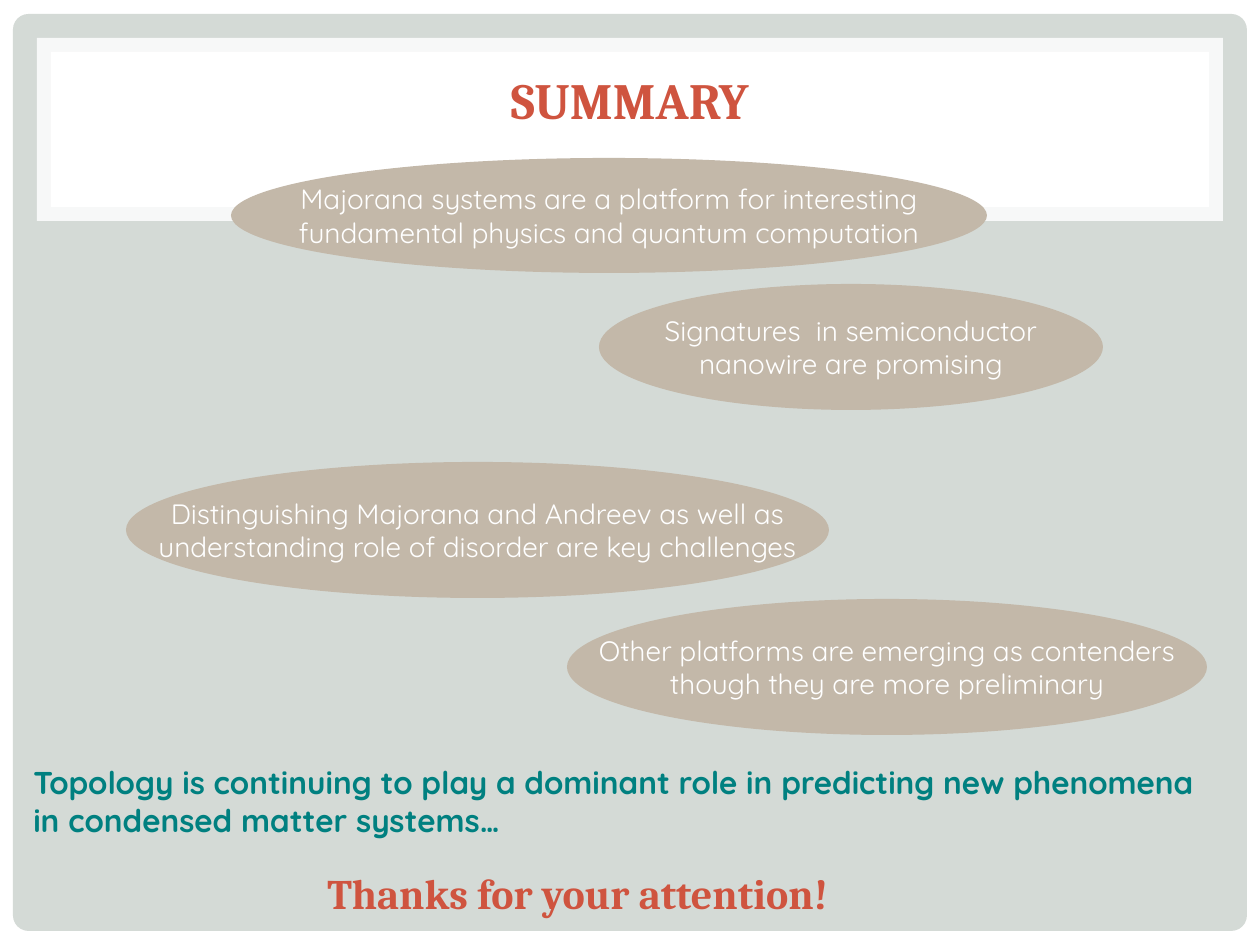
from dataclasses import dataclass

from lxml import etree
from pptx import Presentation
from pptx.dml.color import RGBColor
from pptx.enum.shapes import MSO_SHAPE
from pptx.enum.text import MSO_ANCHOR, PP_ALIGN
from pptx.oxml.ns import qn
from pptx.util import Emu, Pt

RECTANGLE, ROUNDED, OVAL = MSO_SHAPE.RECTANGLE, MSO_SHAPE.ROUNDED_RECTANGLE, MSO_SHAPE.OVAL
LEFT, CENTER = PP_ALIGN.LEFT, PP_ALIGN.CENTER
TOP, MIDDLE = MSO_ANCHOR.TOP, MSO_ANCHOR.MIDDLE
EMU_PER_PX = 914400 / 126
SLIDE_BOX = (0, 0, 1260, 945)


@dataclass(frozen=True)
class Theme:
    """Colours, fonts and type sizes of the slide."""
    sage: str = "D4DAD6"
    white: str = "FFFFFF"
    taupe: str = "C3B8A9"
    rust: str = "CF543F"
    teal: str = "008080"
    serif: str = "Cambria"
    sans: str = "Quicksand"
    title_size: int = 29
    thanks_size: int = 24
    outlook_size: int = 18
    point_size: int = 16


THEME = Theme()

POINTS = [
    ((599, 284, 504, 126), ["Signatures  in semiconductor", "nanowire are promising"]),
    ((567, 599, 640, 136), ["Other platforms are emerging as contenders",
                            "though they are more preliminary"]),
    ((231, 158, 756, 115), ["Majorana systems are a platform for interesting",
                            "fundamental physics and quantum computation"]),
    ((126, 462, 703, 136), ["Distinguishing Majorana and Andreev as well as",
                            "understanding role of disorder are key challenges"]),
]
OUTLOOK = ["Topology is continuing to play a dominant role in predicting new phenomena",
           "in condensed matter systems…"]


def px(length):
    """Turn pixels into EMU."""
    return Emu(round(length * EMU_PER_PX))


def inset(box, dx, dy):
    """Shrink a box by equal margins on opposite sides."""
    left, top, width, height = box
    return left + dx, top + dy, width - 2 * dx, height - 2 * dy


def add_panel(slide, box, kind, color, opacity=100):
    """Add a borderless filled shape."""
    panel = slide.shapes.add_shape(kind, *map(px, box))
    panel.shadow.inherit = False
    panel.fill.solid()
    panel.fill.fore_color.rgb = RGBColor.from_string(color)
    panel.line.fill.background()
    if opacity < 100:
        tint = panel.fill._xPr.find(qn("a:solidFill"))[0]
        etree.SubElement(tint, qn("a:alpha"), val=str(opacity * 1000))
    return panel


def write_text(shape, lines, *, font, size, color, bold=False,
               align=LEFT, anchor=TOP, wrap=True):
    """Write one paragraph per line in a single format."""
    frame = shape.text_frame
    frame.word_wrap = wrap
    frame.vertical_anchor = anchor
    frame.text = "\n".join(lines)
    for paragraph in frame.paragraphs:
        paragraph.alignment = align
        for run in paragraph.runs:
            run.font.name = font
            run.font.size = Pt(size)
            run.font.bold = bold
            run.font.color.rgb = RGBColor.from_string(color)


def add_label(slide, box, lines, **text_format):
    """Add a text box with formatted lines."""
    write_text(slide.shapes.add_textbox(*map(px, box)), lines, **text_format)


def add_frame(slide, box):
    """Add the rounded page on its white margin."""
    add_panel(slide, box, RECTANGLE, THEME.white)
    page = add_panel(slide, inset(box, 13, 14), ROUNDED, THEME.sage)
    page.adjustments[0] = 0.017


def add_header(slide, box):
    """Add the title band with its pale border."""
    left, top, width, _ = box
    add_panel(slide, box, RECTANGLE, THEME.white, opacity=83)
    add_panel(slide, inset(box, 14, 14), RECTANGLE, THEME.white)
    add_label(slide, (left + 25, top + 24, width - 50, 74), ["SUMMARY"],
              font=THEME.serif, size=THEME.title_size, color=THEME.rust,
              bold=True, align=CENTER, anchor=MIDDLE)


def add_point(slide, box, lines):
    """Add one summary point in an ellipse."""
    write_text(add_panel(slide, box, OVAL, THEME.taupe), lines,
               font=THEME.sans, size=THEME.point_size, color=THEME.white,
               align=CENTER, anchor=MIDDLE, wrap=False)


def add_closing(slide, box):
    """Add the outlook and the thanks below it."""
    left, top, width, _ = box
    add_label(slide, (left, top, width, 89), OUTLOOK, font=THEME.sans,
              size=THEME.outlook_size, color=THEME.teal, bold=True, wrap=False)
    add_label(slide, (left + 294, top + 104, 595, 63), ["Thanks for your attention!"],
              font=THEME.serif, size=THEME.thanks_size, color=THEME.rust, bold=True)


def main():
    """Build and save the summary slide."""
    deck = Presentation()
    deck.slide_width, deck.slide_height = map(px, SLIDE_BOX[2:])
    slide = deck.slides.add_slide(deck.slide_layouts[6])
    slide.background.fill.solid()
    slide.background.fill.fore_color.rgb = RGBColor.from_string(THEME.sage)
    add_frame(slide, SLIDE_BOX)
    add_header(slide, (37, 38, 1186, 183))
    for box, lines in POINTS:
        add_point(slide, box, lines)
    add_closing(slide, (21, 757, 1222, 167))
    deck.save("out.pptx")


if __name__ == "__main__":
    main()
